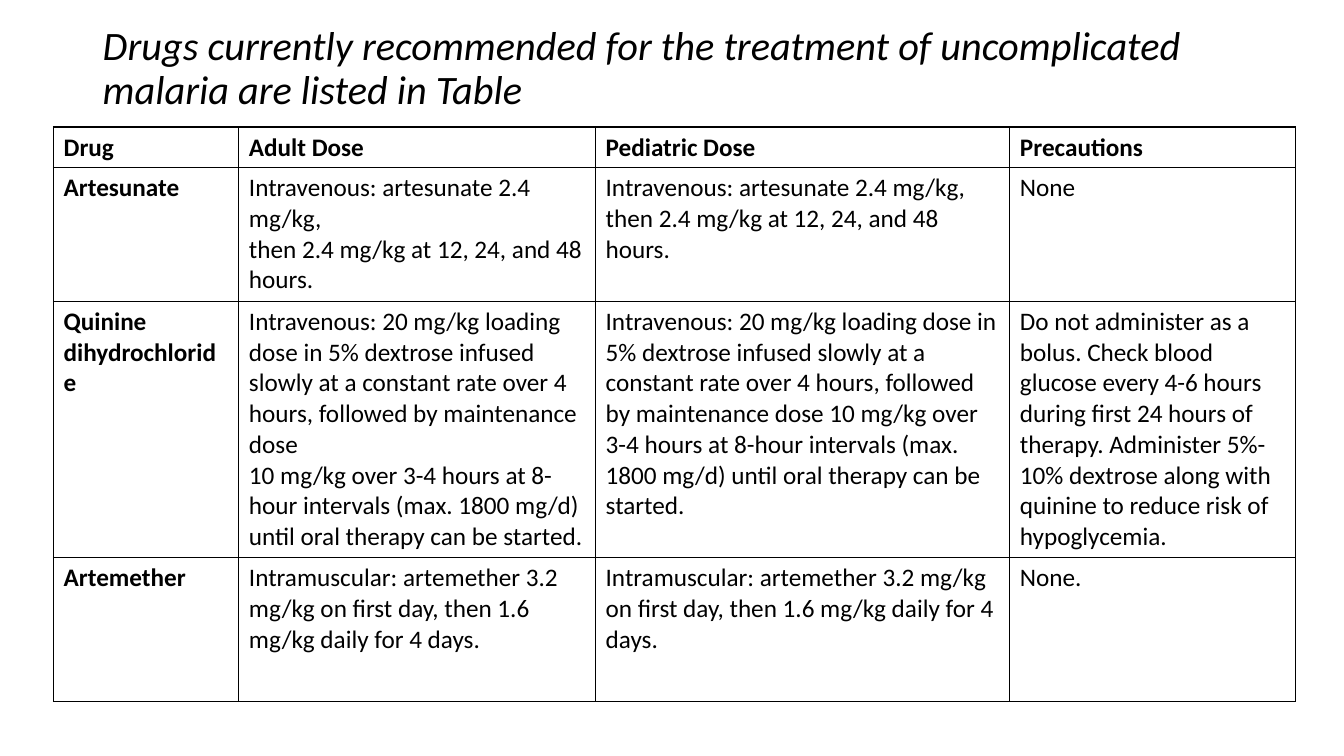
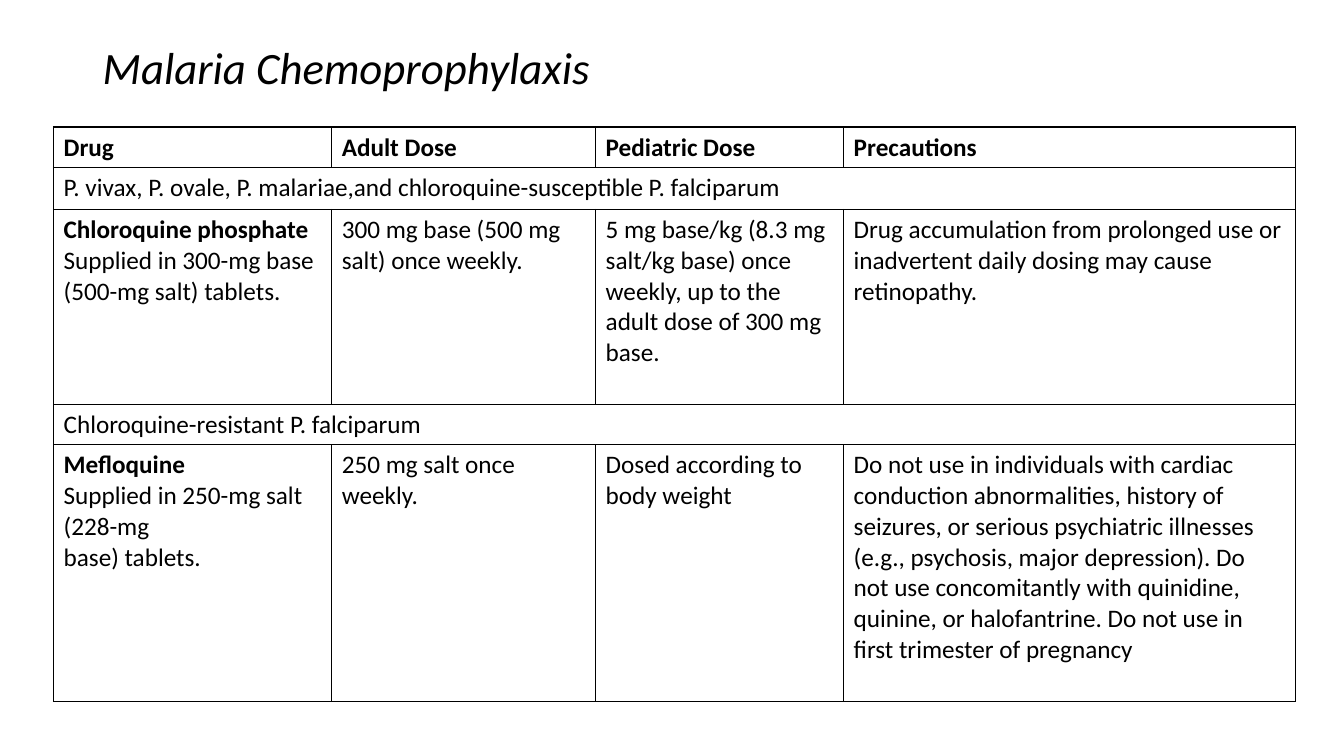
from lxml import etree
from pptx import Presentation, util as u
from pptx.dml.color import RGBColor
from pptx.enum import text
from pptx.oxml import ns

FONT = "Calibri"
INK = "000000"
PAPER = "FFFFFF"
HEADINGS = ["Drug", "Adult Dose", "Pediatric Dose", "Precautions"]

QUININE_START = "Intravenous: 20 mg/kg loading dose in 5% dextrose infused slowly at a constant rate over 4 hours, followed by maintenance dose"
QUININE_END = "10 mg/kg over 3-4 hours at 8-hour intervals (max. 1800 mg/d) until oral therapy can be started."
ARTESUNATE_START = "Intravenous: artesunate 2.4 mg/kg,"
ARTESUNATE_END = "then 2.4 mg/kg at 12, 24, and 48 hours."
ARTEMETHER = "Intramuscular: artemether 3.2 mg/kg on first day, then 1.6 mg/kg daily for 4 days."

topics = [
    {
        "title": "Drugs currently recommended for the treatment of uncomplicated malaria are listed in Table",
        "size": 28.8,
        "widths": [4.67, 8.99, 10.44, 7.19],
        "heights": [1.02, 3.37, 6.46, 3.62],
        "rows": [
            HEADINGS,
            ["Artesunate", f"{ARTESUNATE_START}\n{ARTESUNATE_END}", f"{ARTESUNATE_START} {ARTESUNATE_END}", "None"],
            ["Quinine dihydrochloride", f"{QUININE_START}\n{QUININE_END}", f"{QUININE_START} {QUININE_END}",
             "Do not administer as a bolus. Check blood\nglucose every 4-6 hours during first 24 hours of therapy. "
             "Administer 5%-10% dextrose along with quinine to reduce risk of hypoglycemia."],
            ["Artemether", ARTEMETHER, ARTEMETHER, "None."],
        ],
    },
    {
        "title": "Malaria Chemoprophylaxis",
        "size": 32,
        "widths": [7.01, 6.65, 6.25, 11.38],
        "heights": [1.02, 1.06, 4.91, 1.02, 6.47],
        "rows": [
            HEADINGS,
            ["P. vivax, P. ovale, P. malariae,and chloroquine-susceptible P. falciparum"],
            ["Chloroquine phosphate\nSupplied in 300-mg base (500-mg salt) tablets.",
             "300 mg base (500 mg\nsalt) once weekly.",
             "5 mg base/kg (8.3 mg salt/kg base) once weekly, up to the adult dose of 300 mg base.",
             "Drug accumulation from prolonged use or inadvertent daily dosing may cause retinopathy."],
            ["Chloroquine-resistant P. falciparum"],
            ["Mefloquine\nSupplied in 250-mg salt (228-mg\nbase) tablets.",
             "250 mg salt once\nweekly.",
             "Dosed according to body weight",
             "Do not use in individuals with cardiac conduction abnormalities, history of seizures, or serious "
             "psychiatric illnesses (e.g., psychosis, major depression). Do not use concomitantly with quinidine, "
             "quinine, or halofantrine. Do not use in\nfirst trimester of pregnancy"],
        ],
    },
]


def style(paragraph, size, bold=False, italic=False):
    for run in paragraph.runs:
        run.font.name = FONT
        run.font.size = u.Pt(size)
        run.font.bold = bold
        run.font.italic = italic
        run.font.color.rgb = RGBColor.from_string(INK)


def dress(cell):
    properties = cell._tc.get_or_add_tcPr()
    for side in ("a:lnL", "a:lnR", "a:lnT", "a:lnB"):
        border = etree.SubElement(properties, ns.qn(side), w=str(u.Pt(1)))
        ink = etree.SubElement(border, ns.qn("a:solidFill"))
        etree.SubElement(ink, ns.qn("a:srgbClr"), val=INK)
    cell.fill.solid()
    cell.fill.fore_color.rgb = RGBColor.from_string(PAPER)


deck = Presentation()
deck.slide_width = u.Cm(33.87)
deck.slide_height = u.Cm(19.05)

for topic in topics:
    slide = deck.slides.add_slide(deck.slide_layouts[6])

    title = slide.shapes.add_textbox(u.Cm(2.34), u.Cm(1.02), u.Cm(29.2), u.Cm(1.47)).text_frame
    title.word_wrap = True
    title.vertical_anchor = text.MSO_ANCHOR.MIDDLE
    title.text = topic["title"]
    title.paragraphs[0].line_spacing = 0.9
    style(title.paragraphs[0], topic["size"], italic=True)

    rows, widths, heights = topic["rows"], topic["widths"], topic["heights"]
    doses = slide.shapes.add_table(
        len(rows), len(widths), u.Cm(1.35), u.Cm(3.2), u.Cm(sum(widths)), u.Cm(sum(heights))
    ).table
    doses.first_row = False
    doses.horz_banding = False
    for column, width in zip(doses.columns, widths):
        column.width = u.Cm(width)
    for row, height in zip(doses.rows, heights):
        row.height = u.Cm(height)

    for r, entries in enumerate(rows):
        for c in range(len(widths)):
            dress(doses.cell(r, c))
        is_group = len(entries) == 1
        if is_group:
            doses.cell(r, 0).merge(doses.cell(r, len(widths) - 1))
        for c, entry in enumerate(entries):
            frame = doses.cell(r, c).text_frame
            frame.text = entry
            for p, paragraph in enumerate(frame.paragraphs):
                is_drug_name = c == 0 and p == 0 and not is_group
                style(paragraph, 18, bold=r == 0 or is_drug_name)

deck.save("out.pptx")
